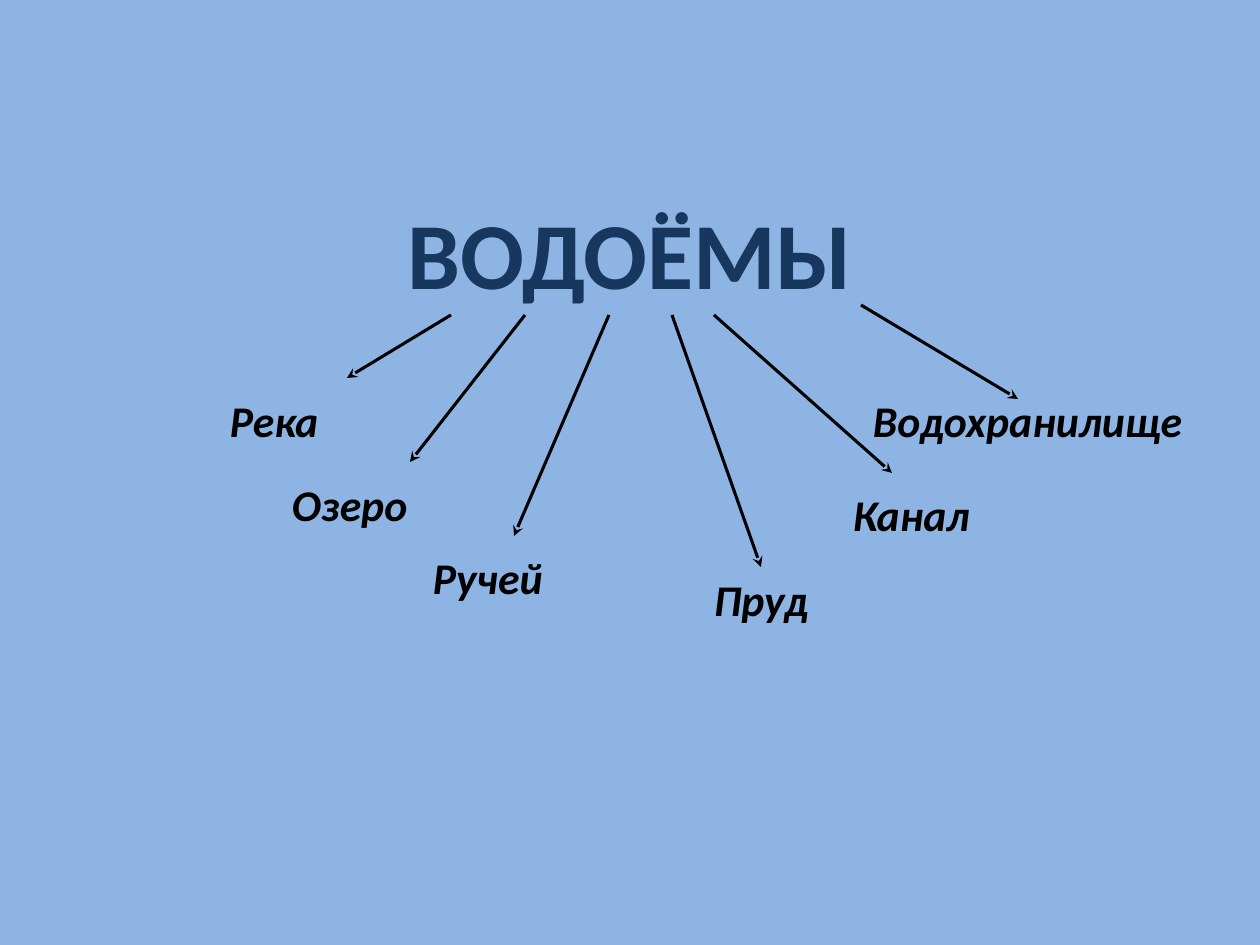
"""Build a slide that shows the kinds of bodies of water as a branching diagram."""
from lxml.etree import SubElement
from pptx import Presentation
from pptx.dml.color import RGBColor
from pptx.enum.shapes import MSO_CONNECTOR
from pptx.enum.text import MSO_ANCHOR, MSO_AUTO_SIZE, PP_ALIGN
from pptx.oxml.ns import qn
from pptx.util import Pt

PX = 914400 // 126
BACKGROUND, TITLE_COLOR, INK = "8EB4E3", "17375E", "000000"

TITLE = ("ВОДОЁМЫ", (393, 189, 474, 127))
LABEL_HEIGHT = 66
LABELS = [
    ("Река", 230, 388, 110),
    ("Озеро", 292, 472, 140),
    ("Ручей", 433, 545, 140),
    ("Пруд", 714, 567, 140),
    ("Канал", 853, 482, 140),
    ("Водохранилище", 873, 388, 330),
]
ARROWS = [
    ((451, 315), (347, 378)),
    ((525, 315), (410, 462)),
    ((609, 315), (514, 536)),
    ((672, 315), (761, 567)),
    ((714, 315), (892, 473)),
    ((861, 305), (1018, 399)),
]


def color(value):
    return RGBColor.from_string(value)


def scale(*lengths):
    return [length * PX for length in lengths]


def write(shape, text, size, ink, italic=False, align=PP_ALIGN.LEFT):
    frame = shape.text_frame
    frame.word_wrap = True
    frame.auto_size = MSO_AUTO_SIZE.NONE
    frame.vertical_anchor = MSO_ANCHOR.TOP
    frame.margin_left = frame.margin_right = 0
    paragraph = frame.paragraphs[0]
    paragraph.alignment = align
    run = paragraph.add_run()
    run.text = text
    font = run.font
    font.name, font.size, font.bold, font.italic = "Calibri", Pt(size), True, italic
    font.color.rgb = color(ink)


def add_arrow(slide, start, end):
    arrow = slide.shapes.add_connector(MSO_CONNECTOR.STRAIGHT, *scale(*start, *end))
    arrow.line.color.rgb = color(INK)
    arrow.line.width = Pt(1.75)
    SubElement(arrow.line._get_or_add_ln(), qn("a:tailEnd"), type="stealth")
    SubElement(arrow._element.spPr, qn("a:effectLst"))


def main():
    presentation = Presentation()
    presentation.slide_width, presentation.slide_height = scale(1260, 945)
    slide = presentation.slides.add_slide(presentation.slide_layouts[5])
    slide.background.fill.solid()
    slide.background.fill.fore_color.rgb = color(BACKGROUND)

    text, box = TITLE
    title = slide.shapes.title
    title.left, title.top, title.width, title.height = scale(*box)
    write(title, text, 54, TITLE_COLOR, align=PP_ALIGN.CENTER)

    for text, left, top, width in LABELS:
        label = slide.shapes.add_textbox(*scale(left, top, width, LABEL_HEIGHT))
        write(label, text, 25, INK, italic=True)

    for start, end in ARROWS:
        add_arrow(slide, start, end)

    presentation.save("out.pptx")


if __name__ == "__main__":
    main()
